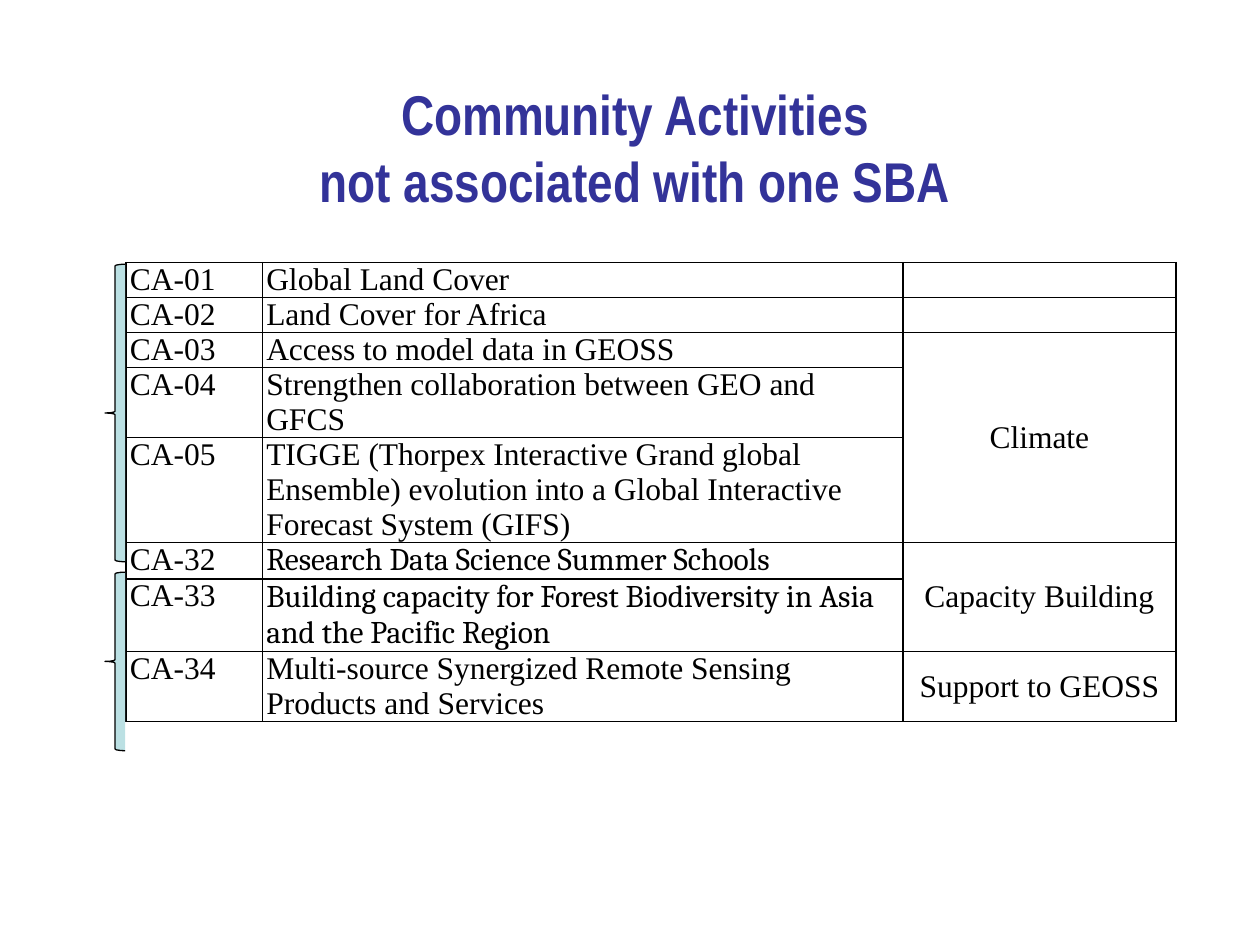
import pptx
import pptx.dml.color
import pptx.enum.shapes
import pptx.enum.text
import pptx.oxml
import pptx.oxml.ns
import pptx.util

Pt = pptx.util.Pt
RGB = pptx.dml.color.RGBColor
ALIGN = pptx.enum.text.PP_ALIGN
ANCHOR = pptx.enum.text.MSO_ANCHOR

BLUE = RGB(0x33, 0x33, 0x99)
PALE = RGB(0xBB, 0xE0, 0xE3)
BLACK = RGB(0, 0, 0)

SERIF = "Times New Roman"
WIDTHS = (78, 366, 156)
LINE = 20  # height of one text line in the table

# Code, activity, font, number of lines
ROWS = (
    ("CA-01", "Global Land Cover", SERIF, 1),
    ("CA-02", "Land Cover for Africa", SERIF, 1),
    ("CA-03", "Access to model data in GEOSS", SERIF, 1),
    ("CA-04", "Strengthen collaboration between GEO and GFCS", SERIF, 2),
    ("CA-05", "TIGGE (Thorpex Interactive Grand global Ensemble) evolution "
              "into a Global Interactive Forecast System (GIFS)", SERIF, 3),
    ("CA-32", "Research Data Science Summer Schools", "Cambria", 1),
    ("CA-33", "Building capacity for Forest Biodiversity in Asia and the "
              "Pacific Region", "Cambria", 2),
    ("CA-34", "Multi-source Synergized Remote Sensing Products and Services",
     SERIF, 2),
)
# First row, last row, label
GROUPS = ((2, 4, "Climate"), (5, 6, "Capacity Building"),
          (7, 7, "Support to GEOSS"))


def apply(item, values):
    for name, value in values.items():
        setattr(item, name, value)


class Deck:
    head = {"name": "Arial Narrow", "size": Pt(32), "bold": True}
    body = {"size": Pt(18), "bold": False}
    inset = {"margin_left": Pt(2.2), "margin_right": Pt(2.2),
             "margin_top": 0, "margin_bottom": 0}

    def __init__(self):
        self.file = pptx.Presentation()
        apply(self.file, {"slide_width": Pt(720), "slide_height": Pt(540)})
        self.slide = self.file.slides.add_slide(self.file.slide_layouts[5])

    def title(self, text, left, top, width, height):
        box = self.slide.shapes.title
        apply(box, {"left": Pt(left), "top": Pt(top),
                    "width": Pt(width), "height": Pt(height)})
        frame = box.text_frame
        frame.text = text
        apply(frame, {"auto_size": pptx.enum.text.MSO_AUTO_SIZE.NONE,
                      "vertical_anchor": ANCHOR.MIDDLE, "word_wrap": True})
        para = frame.paragraphs[0]
        para.alignment = ALIGN.CENTER
        for run in para.runs:
            apply(run.font, self.head)
            run.font.color.rgb = BLUE

    def table(self, left, top):
        lines = [row[3] for row in ROWS]
        frame = self.slide.shapes.add_table(
            len(ROWS), len(WIDTHS), Pt(left), Pt(top),
            Pt(sum(WIDTHS)), Pt(LINE * sum(lines)))
        grid = frame.table
        apply(grid, {"first_row": False, "horz_banding": False})
        for col, width in zip(grid.columns, WIDTHS):
            col.width = Pt(width)
        for row, count in zip(grid.rows, lines):
            row.height = Pt(LINE * count)
        for cell in grid.iter_cells():
            self.border(cell)
        # Codes and activities
        for num, (code, name, font, _) in enumerate(ROWS):
            self.label(grid.cell(num, 0), code, SERIF, ALIGN.JUSTIFY)
            self.label(grid.cell(num, 1), name, font, ALIGN.LEFT)
        # Group labels
        for first, last, group in GROUPS:
            cell = grid.cell(first, 2)
            if last > first:
                cell.merge(grid.cell(last, 2))
            self.label(cell, group, SERIF, ALIGN.CENTER)
            cell.vertical_anchor = ANCHOR.MIDDLE

    def border(self, cell):
        apply(cell, self.inset)
        props = cell._tc.get_or_add_tcPr()
        space = pptx.oxml.ns.nsdecls("a")
        for side in "LRTB":
            props.append(pptx.oxml.parse_xml(
                f'<a:ln{side} {space} w="12700"><a:solidFill>'
                f'<a:srgbClr val="{BLACK}"/></a:solidFill></a:ln{side}>'))
        cell.fill.background()
        # Size of the empty line, so that blank cells keep the row height
        cell.text_frame.paragraphs[0]._p.append(pptx.oxml.parse_xml(
            f'<a:endParaRPr {space} sz="1800">'
            f'<a:latin typeface="{SERIF}"/></a:endParaRPr>'))

    def label(self, cell, text, font, align):
        para = cell.text_frame.paragraphs[0]
        para.alignment = align
        run = para.add_run()
        run.text = text
        apply(run.font, {**self.body, "name": font})
        run.font.color.rgb = BLACK

    def brace(self, left, top, width, height):
        shape = self.slide.shapes.add_shape(
            pptx.enum.shapes.MSO_SHAPE.LEFT_BRACE,
            Pt(left), Pt(top), Pt(width), Pt(height))
        shape.shadow.inherit = False
        shape.fill.solid()
        shape.fill.fore_color.rgb = PALE
        shape.line.color.rgb = BLACK
        shape.line.width = Pt(0.75)


def main():
    deck = Deck()
    deck.title("Community Activities\vnot associated with one SBA",
               30, 66, 666, 36)
    deck.table(72, 150)
    # Braces beside the two halves of the table
    for top, height in ((151, 170), (327, 102)):
        deck.brace(60, top, 11.5, height)
    deck.file.save("out.pptx")


if __name__ == "__main__":
    main()
